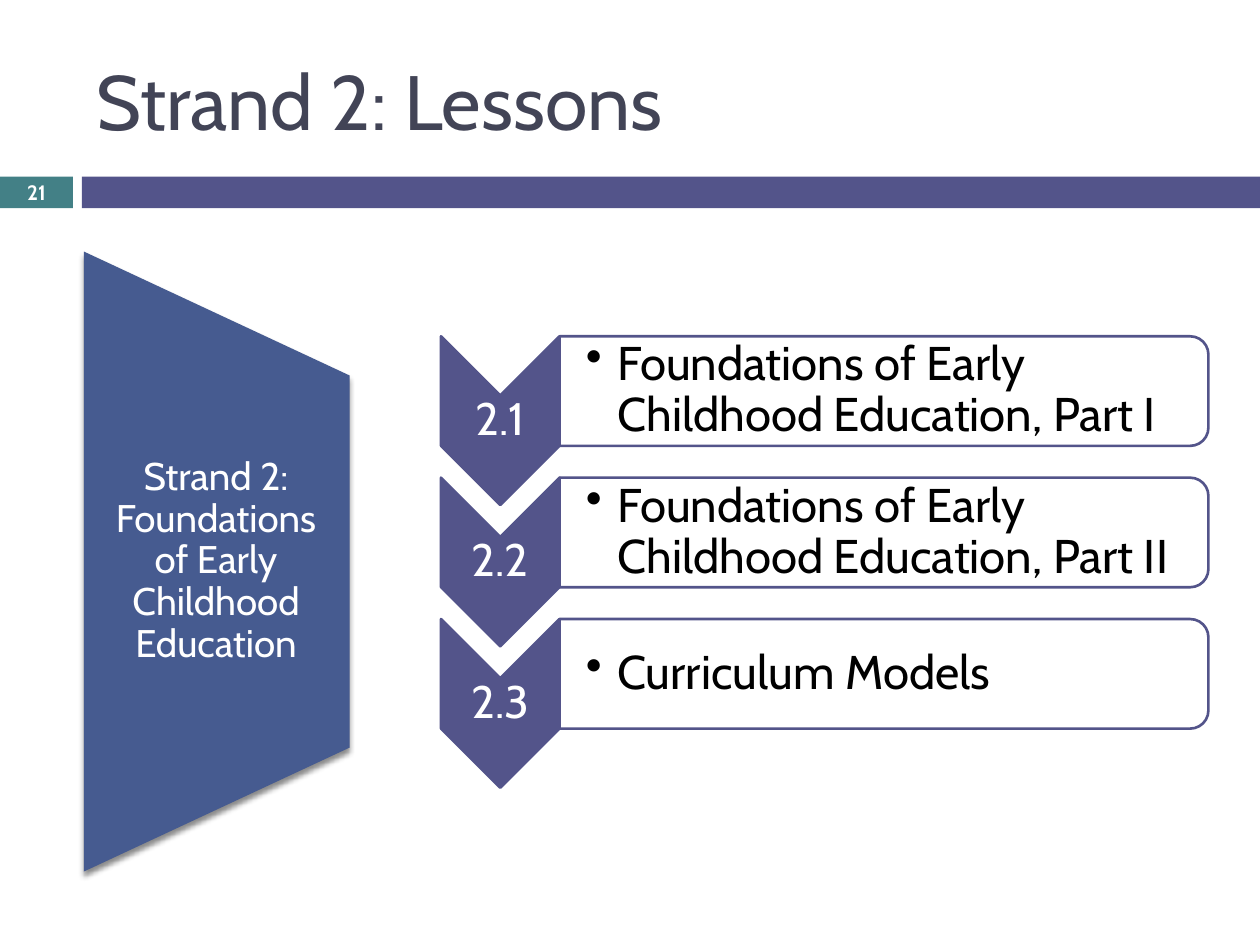
from dataclasses import dataclass

from lxml import etree
from pptx import Presentation
from pptx.dml.color import RGBColor
from pptx.enum.shapes import MSO_SHAPE
from pptx.enum.text import MSO_ANCHOR, PP_ALIGN
from pptx.oxml.ns import qn
from pptx.util import Cm, Pt

RECTANGLE = MSO_SHAPE.RECTANGLE
TRAPEZOID = MSO_SHAPE.FLOWCHART_MANUAL_OPERATION
CHEVRON = MSO_SHAPE.CHEVRON
ROUNDED_SIDE = MSO_SHAPE.ROUND_2_SAME_RECTANGLE
MIDDLE = MSO_ANCHOR.MIDDLE
LEFT, CENTER = PP_ALIGN.LEFT, PP_ALIGN.CENTER


@dataclass(frozen=True)
class Theme:
    font: str = "Cabin"
    heading: str = "424456"
    accent: str = "53548A"
    teal: str = "438086"
    panel: str = "465B90"
    white: str = "FFFFFF"
    black: str = "000000"
    title_size: float = 44
    panel_size: float = 22
    number_size: float = 26
    lesson_size: float = 27
    page_size: float = 11.9
    outline: float = 1.5


class SlideBuilder:
    def __init__(self, slide, theme):
        self.slide = slide
        self.theme = theme

    def shape(self, kind, box, fill, line=None, rotation=0):
        """Place a shape in its visible box, swapping sides for a quarter turn."""
        left, top, width, height = box
        if rotation in (90, 270):
            left += (width - height) / 2
            top += (height - width) / 2
            width, height = height, width
        shape = self.slide.shapes.add_shape(kind, Cm(left), Cm(top), Cm(width), Cm(height))
        shape.rotation = rotation
        shape.shadow.inherit = False
        shape.fill.solid()
        shape.fill.fore_color.rgb = RGBColor.from_string(fill)
        if line:
            shape.line.color.rgb = RGBColor.from_string(line)
            shape.line.width = Pt(self.theme.outline)
        else:
            shape.line.fill.background()
        return shape

    def text(self, box, words, size, color, align=CENTER, margins=(0.25, 0.13, 0.25, 0.13),
             spacing=1.0, bold=False):
        shape = self.slide.shapes.add_textbox(*map(Cm, box))
        frame = shape.text_frame
        frame.word_wrap = True
        frame.vertical_anchor = MIDDLE
        (frame.margin_left, frame.margin_top,
         frame.margin_right, frame.margin_bottom) = map(Cm, margins)
        paragraph = frame.paragraphs[0]
        paragraph.text = words
        paragraph.alignment = align
        paragraph.line_spacing = spacing
        paragraph.font.name = self.theme.font
        paragraph.font.size = Pt(size)
        paragraph.font.bold = bold
        paragraph.font.color.rgb = RGBColor.from_string(color)
        return paragraph

    def bullet(self, paragraph, indent):
        properties = paragraph._p.get_or_add_pPr()
        properties.set("marL", str(Cm(indent)))
        properties.set("indent", str(-Cm(indent)))
        mark = etree.Element(qn("a:buChar"), char="•")
        defaults = properties.find(qn("a:defRPr"))
        if defaults is None:
            properties.append(mark)
        else:
            defaults.addprevious(mark)

    def drop_shadow(self, shape):
        effects = shape._element.spPr.find(qn("a:effectLst"))
        shadow = etree.SubElement(effects, qn("a:outerShdw"), blurRad=str(Pt(3)),
                                  dist=str(Pt(2.4)), dir="5400000", rotWithShape="0")
        color = etree.SubElement(shadow, qn("a:srgbClr"), val=self.theme.black)
        etree.SubElement(color, qn("a:alpha"), val="45000")

    def lesson(self, top, number, name):
        theme = self.theme
        self.shape(CHEVRON, (8.89, top, 2.39, 3.4), theme.accent, theme.accent, 90)
        self.text((8.89, top + 1.19, 2.39, 1.02), number, theme.number_size, theme.white,
                  margins=(0.05,) * 4, spacing=0.9)
        card = self.shape(ROUNDED_SIDE, (11.28, top, 13.08, 2.21), theme.white, theme.accent, 90)
        color = card._element.spPr.find(qn("a:solidFill"))[0]
        etree.SubElement(color, qn("a:alpha"), val="90000")
        paragraph = self.text((11.28, top + 0.1, 12.95, 2.01), name, theme.lesson_size,
                              theme.black, LEFT, (0.53, 0.05, 0.05, 0.05), 0.9)
        self.bullet(paragraph, 0.64)


def main():
    presentation = Presentation()
    presentation.slide_width, presentation.slide_height = Cm(25.4), Cm(19.05)
    slide = presentation.slides.add_slide(presentation.slide_layouts[6])
    theme = Theme()
    builder = SlideBuilder(slide, theme)

    # Title and header band
    builder.shape(RECTANGLE, (0, 3.56, 1.47, 0.64), theme.teal)
    builder.shape(RECTANGLE, (1.65, 3.56, 23.75, 0.64), theme.accent)
    builder.text((1.7, 0.64, 22.66, 2.74), "Strand 2: Lessons", theme.title_size,
                 theme.heading, LEFT)

    # Strand panel
    panel = builder.shape(TRAPEZOID, (1.69, 5.07, 5.36, 12.5), theme.panel, rotation=270)
    builder.drop_shadow(panel)
    builder.text((1.69, 7.57, 5.36, 7.5), "Strand 2: Foundations of Early Childhood Education",
                 theme.panel_size, theme.white, margins=(0.38, 0, 0.41, 0), spacing=0.9)

    # Lessons, evenly spaced
    lessons = [
        ("2.1", "Foundations of Early Childhood Education, Part I"),
        ("2.2", "Foundations of Early Childhood Education, Part II"),
        ("2.3", "Curriculum Models"),
    ]
    for row, (number, name) in enumerate(lessons):
        builder.lesson(6.78 + row * 2.85, number, name)

    # Slide number
    builder.text((0, 3.53, 1.47, 0.69), "21", theme.page_size, theme.white, bold=True)

    presentation.save("out.pptx")


if __name__ == "__main__":
    main()
